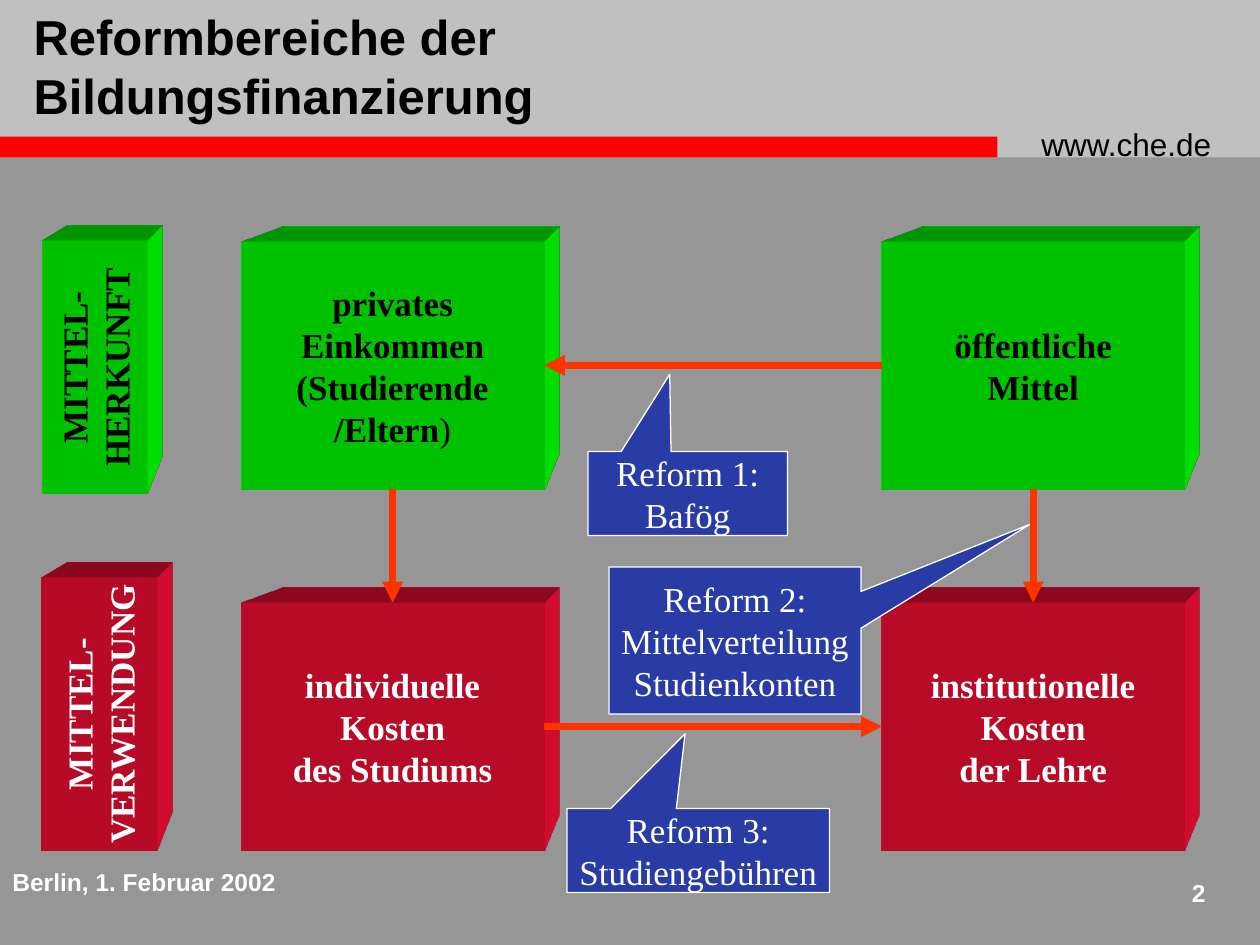
from dataclasses import dataclass
from lxml import etree
from pptx import Presentation
from pptx.dml.color import RGBColor
from pptx.enum.shapes import MSO_CONNECTOR as Conn, MSO_SHAPE as Geo
from pptx.enum.text import MSO_ANCHOR as Anchor, MSO_AUTO_SIZE as AutoSize, PP_ALIGN as Align
from pptx.oxml import parse_xml
from pptx.oxml.ns import nsdecls, qn
from pptx.util import Emu, Inches, Pt

COLS, ROWS = 120, 90
WIDTH, HEIGHT = Inches(10), Inches(7.5)
BOX_W, BOX_H = 28.8, 23.6
LEFT, RIGHT, TOP, BOTTOM = 23, 84, 23, 57.4


@dataclass(frozen=True)
class Theme:
    page: str = "969696"
    band: str = "C0C0C0"
    stripe: str = "FF0000"
    source: str = "00FF00"
    use: str = "F00E34"
    reform: str = "293BA5"
    arrow: str = "FF3300"
    dark: str = "000000"
    light: str = "FFFFFF"
    sans: str = "Arial"
    serif: str = "Times New Roman"
    title: int = 28
    body: int = 20
    web: int = 18
    footer: int = 14


@dataclass(frozen=True)
class Area:
    x: float
    y: float
    w: float
    h: float

    def emu(self) -> tuple[Emu, ...]:
        cx, cy = WIDTH / COLS, HEIGHT / ROWS
        return tuple(Emu(round(v)) for v in (self.x * cx, self.y * cy, self.w * cx, self.h * cy))


@dataclass(frozen=True)
class Block:
    area: Area
    text: str
    fill: str
    color: str
    vertical: bool = False
    plain_tail: str = ""


@dataclass(frozen=True)
class Callout:
    area: Area
    text: str
    tip: tuple[float, float]


T = Theme()


def rgb(value: str) -> RGBColor:
    return RGBColor.from_string(value)


def style(p, size: int, name: str, color: str, bold: bool = False, align=Align.LEFT) -> None:
    p.alignment = align
    for r in p.runs:
        for key, value in {"size": Pt(size), "name": name, "bold": bold}.items():
            setattr(r.font, key, value)
        r.font.color.rgb = rgb(color)


def write(tf, text: str, **fmt) -> None:
    tf.text = text
    for p in tf.paragraphs:
        style(p, **fmt)


def add_shape(s, geo, area: Area, fill: str):
    sp = s.shapes.add_shape(geo, *area.emu())
    sp.shadow.inherit = False
    sp.fill.solid()
    sp.fill.fore_color.rgb = rgb(fill)
    sp.line.fill.background()
    return sp


def add_centred(sp, text: str, color: str, bold: bool):
    tf = sp.text_frame
    tf.word_wrap, tf.vertical_anchor = False, Anchor.MIDDLE
    write(tf, text, size=T.body, name=T.serif, color=color, bold=bold, align=Align.CENTER)
    return tf


def extrude(sp, color: str) -> None:
    ns = nsdecls("a")
    sp._element.spPr.append(parse_xml(
        f'<a:scene3d {ns}><a:camera prst="legacyPerspectiveTopRight"/>'
        '<a:lightRig rig="legacyFlat3" dir="b"/></a:scene3d>'))
    sp._element.spPr.append(parse_xml(
        f'<a:sp3d {ns} extrusionH="887400" prstMaterial="legacyMatte">'
        f'<a:extrusionClr><a:srgbClr val="{color}"/></a:extrusionClr></a:sp3d>'))


def add_block(s, block: Block) -> None:
    sp = add_shape(s, Geo.RECTANGLE, block.area, block.fill)
    extrude(sp, block.fill)
    tf = add_centred(sp, block.text, block.color, True)
    if block.vertical:
        tf._txBody.bodyPr.set("vert", "vert270")
    if block.plain_tail:
        p = tf.paragraphs[-1]
        p.add_run().text = block.plain_tail
        style(p, T.body, T.serif, block.color, True, Align.CENTER)
        p.runs[-1].font.bold = False


def add_callout(s, callout: Callout) -> None:
    sp = add_shape(s, Geo.RECTANGULAR_CALLOUT, callout.area, T.reform)
    sp.adjustments[0], sp.adjustments[1] = callout.tip
    sp.line.color.rgb = rgb(T.light)
    sp.line.width = Pt(0.75)
    add_centred(sp, callout.text, T.light, False)


def add_arrow(s, x1: float, y1: float, x2: float, y2: float) -> None:
    start, end = Area(x1, y1, 0, 0).emu()[:2], Area(x2, y2, 0, 0).emu()[:2]
    line = s.shapes.add_connector(Conn.STRAIGHT, *start, *end)
    line.line.color.rgb = rgb(T.arrow)
    line.line.width = Pt(4)
    etree.SubElement(line.line._get_or_add_ln(), qn("a:tailEnd"), type="triangle")
    etree.SubElement(line._element.spPr, qn("a:effectLst"))


def add_label(s, area: Area, text: str, **fmt) -> None:
    tf = s.shapes.add_textbox(*area.emu()).text_frame
    tf.word_wrap = True
    write(tf, text, name=T.sans, **fmt)


def add_title(s, area: Area, text: str) -> None:
    sp = s.shapes.title
    for key, value in zip(("left", "top", "width", "height"), area.emu()):
        setattr(sp, key, value)
    tf = sp.text_frame
    for key, value in {"word_wrap": True, "auto_size": AutoSize.NONE, "vertical_anchor": Anchor.TOP}.items():
        setattr(tf, key, value)
    write(tf, text, size=T.title, name=T.sans, color=T.dark, bold=True)


def box(x: float, y: float) -> Area:
    return Area(x, y, BOX_W, BOX_H)


BLOCKS = (
    Block(Area(4, 23, 10, 24), "MITTEL-\nHERKUNFT", T.source, T.dark, vertical=True),
    Block(Area(4, 55, 11, 26), "MITTEL-\nVERWENDUNG", T.use, T.light, vertical=True),
    Block(box(LEFT, TOP), "privates\nEinkommen\n(Studierende\n/Eltern", T.source, T.dark, plain_tail=")"),
    Block(box(RIGHT, TOP), "öffentliche\nMittel", T.source, T.dark),
    Block(box(LEFT, BOTTOM), "individuelle\nKosten\ndes Studiums", T.use, T.light),
    Block(box(RIGHT, BOTTOM), "institutionelle\nKosten\nder Lehre", T.use, T.light),
)
CALLOUTS = (
    Callout(Area(56, 43, 19, 8), "Reform 1:\nBafög", (-0.09, -1.42)),
    Callout(Area(58, 54, 24, 14), "Reform 2:\nMittelverteilung\nStudienkonten", (1.17, -0.79)),
    Callout(Area(54, 77, 25, 8), "Reform 3:\nStudiengebühren", (-0.05, -1.39)),
)


def main() -> None:
    prs = Presentation()
    prs.slide_width, prs.slide_height = WIDTH, HEIGHT
    s = prs.slides.add_slide(prs.slide_layouts[5])
    s.background.fill.solid()
    s.background.fill.fore_color.rgb = rgb(T.page)
    add_shape(s, Geo.RECTANGLE, Area(0, 0, COLS, 15), T.band)
    add_shape(s, Geo.RECTANGLE, Area(0, 13, 95, 2), T.stripe)
    s.shapes._spTree.append(s.shapes.title._element)
    add_title(s, Area(2, 0, 92, 12.4), "Reformbereiche der Bildungsfinanzierung")
    add_label(s, Area(98, 11.3, 21, 4.8), "www.che.de", size=T.web, color=T.dark)
    add_label(s, Area(0, 82, 29, 6), "Berlin, 1. Februar 2002", size=T.footer, color=T.light, bold=True)
    add_label(s, Area(109, 83, 7, 5), "2", size=T.footer, color=T.light, bold=True, align=Align.RIGHT)
    for block in BLOCKS:
        add_block(s, block)
    for callout in CALLOUTS:
        add_callout(s, callout)
    for x in (LEFT, RIGHT):
        add_arrow(s, x + BOX_W / 2, TOP + BOX_H, x + BOX_W / 2, BOTTOM)
    add_arrow(s, LEFT + BOX_W, BOTTOM + BOX_H / 2, RIGHT, BOTTOM + BOX_H / 2)
    add_arrow(s, RIGHT, TOP + BOX_H / 2, LEFT + BOX_W, TOP + BOX_H / 2)
    prs.save("out.pptx")


if __name__ == "__main__":
    main()
